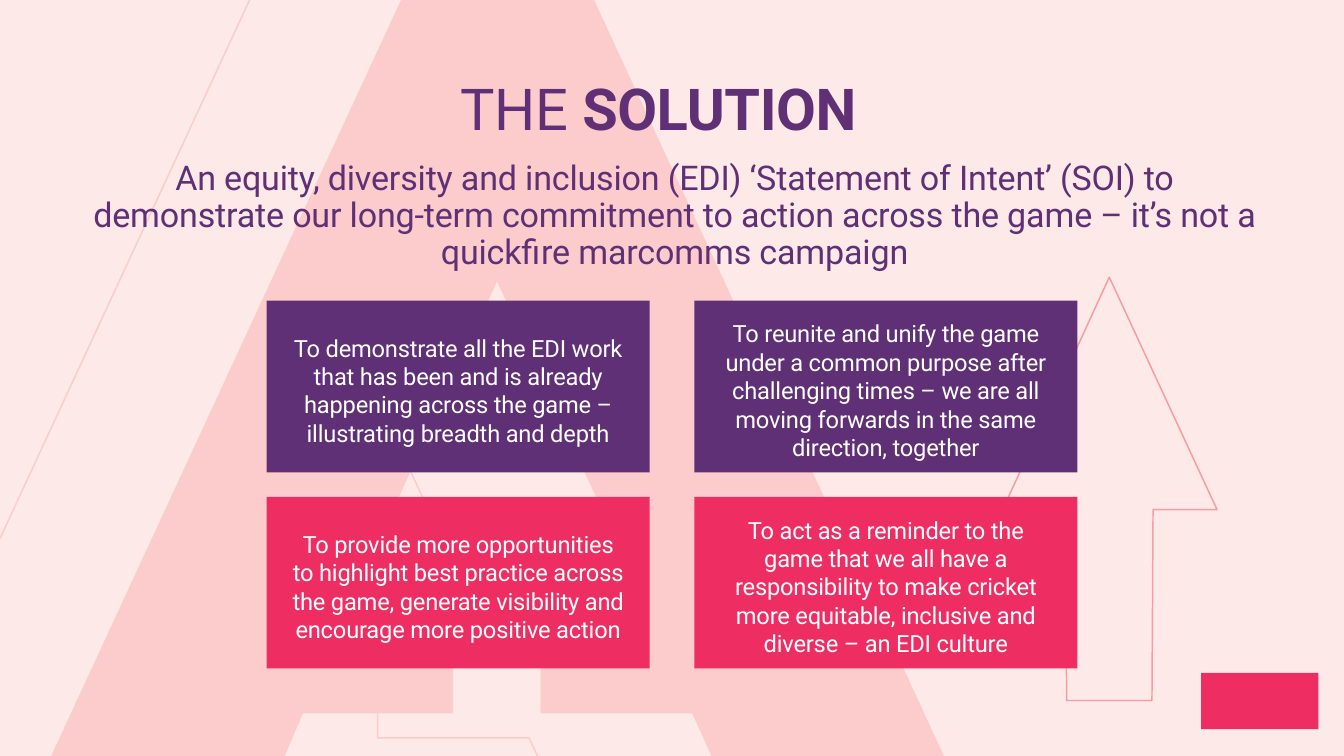
from lxml import etree
from pptx import Presentation
from pptx import util as u
from pptx.dml.color import RGBColor
from pptx.enum import shapes, text
from pptx.oxml.ns import qn

WIDTH, HEIGHT = 12.6, 7.09
FONT = "Roboto"
COLORS = {
    "background": "FDE9E7",
    "letter": "FBCCCB",
    "arrow": "F69DA2",
    "purple": "5F3075",
    "pink": "EE2E62",
    "white": "FFFFFF",
}

# Card grid: first corner, card size and distance between cards
GRID_LEFT, GRID_TOP = 2.5, 2.82
CARD_WIDTH, CARD_HEIGHT = 3.59, 1.61
COLUMN_STEP, ROW_STEP = 4.01, 1.84

# Each row: colour and (side margin, wording) for every column
CARD_ROWS = [
    ("purple", [
        (0.17, "To demonstrate all the EDI work that has been and is already "
               "happening across the game – illustrating breadth and depth"),
        (0.21, "To reunite and unify the game under a common purpose after "
               "challenging times – we are all moving forwards in the same "
               "direction, together"),
    ]),
    ("pink", [
        (0.24, "To provide more opportunities to highlight best practice across "
               "the game, generate visibility and encourage more positive action"),
        (0.3, "To act as a reminder to the game that we all have a responsibility "
              "to make cricket more equitable, inclusive and diverse – an EDI culture"),
    ]),
]

# Outlines in inches
UP_ARROW = [(9.4, 4.78), (9.99, 4.78), (10, 6.57), (10.8, 6.57),
            (10.81, 4.78), (11.41, 4.78), (10.4, 2.6)]
LETTER_A = [(3.76, 0), (0.48, HEIGHT), (2.67, HEIGHT), (2.84, 6.69), (4.25, 6.69),
            (4.25, 4.86), (3.65, 4.86), (4.66, 2.64), (5.68, 4.86), (5.07, 4.86),
            (5.07, 6.69), (6.49, 6.69), (6.67, HEIGHT), (8.85, HEIGHT), (5.57, 0)]
INNER_LINE = [(1.24, HEIGHT), (1.32, 6.92), (2.73, 6.92), (2.72, 5.09), (2.12, 5.09),
              (3.13, 2.87), (4.16, 5.09), (3.54, 5.09), (3.54, 6.92), (4.96, 6.92),
              (5.04, HEIGHT)]
SLANTED_LINES = [((0, 5.05), (2.34, 0)), ((3.93, 0), (7.22, HEIGHT))]


def rgb(name):
    return RGBColor.from_string(COLORS[name])


def paint(shape, fill=None, line=None):
    shape.shadow.inherit = False
    if fill:
        shape.fill.solid()
        shape.fill.fore_color.rgb = rgb(fill)
    else:
        shape.fill.background()
    if line:
        shape.line.color.rgb = rgb(line)
        shape.line.width = u.Pt(1)
    else:
        shape.line.fill.background()


def add_outline(slide, points, close=True, **colors):
    hundredths = [(x * 100, y * 100) for x, y in points]
    builder = slide.shapes.build_freeform(*hundredths[0], scale=u.Inches(0.01))
    builder.add_line_segments(hundredths[1:], close=close)
    paint(builder.convert_to_shape(), **colors)


def add_line(slide, start, end, color):
    ends = [u.Inches(value) for value in (*start, *end)]
    line = slide.shapes.add_connector(shapes.MSO_CONNECTOR.STRAIGHT, *ends)
    line.line.color.rgb = rgb(color)
    line.line.width = u.Pt(1)
    etree.SubElement(line._element.spPr, qn("a:effectLst"))


def write(shape, *parts, size, color, align=text.PP_ALIGN.CENTER,
          anchor=text.MSO_ANCHOR.TOP, side=0, top=0, leading=None, tracking=0):
    """Write (wording, bold) parts as one paragraph."""
    frame = shape.text_frame
    frame.word_wrap = True
    frame.vertical_anchor = anchor
    frame.margin_left = frame.margin_right = u.Inches(side)
    frame.margin_top, frame.margin_bottom = u.Inches(top), 0
    paragraph = frame.paragraphs[0]
    paragraph.alignment = align
    if leading:
        paragraph.line_spacing = u.Pt(leading)
    for wording, bold in parts:
        run = paragraph.add_run()
        run.text = wording
        run.font.name, run.font.size, run.font.bold = FONT, u.Pt(size), bold
        run.font.color.rgb = rgb(color)
        if tracking:
            run._r.get_or_add_rPr().set("spc", str(round(tracking * 100)))


def add_text(slide, box, *parts, **form):
    area = slide.shapes.add_textbox(*[u.Inches(value) for value in box])
    write(area, *parts, **form)


def add_block(slide, box, fill):
    block = slide.shapes.add_shape(shapes.MSO_SHAPE.RECTANGLE,
                                   *[u.Inches(value) for value in box])
    paint(block, fill=fill)
    return block


def add_cards(slide):
    for row, (fill, cards) in enumerate(CARD_ROWS):
        for column, (side, wording) in enumerate(cards):
            card = add_block(slide, (GRID_LEFT + column * COLUMN_STEP,
                                     GRID_TOP + row * ROW_STEP,
                                     CARD_WIDTH, CARD_HEIGHT), fill)
            write(card, (wording, False), size=16, color="white", side=side,
                  top=0.07, anchor=text.MSO_ANCHOR.MIDDLE, tracking=-0.1)


def main():
    deck = Presentation()
    deck.slide_width, deck.slide_height = u.Inches(WIDTH), u.Inches(HEIGHT)
    slide = deck.slides.add_slide(deck.slide_layouts[6])

    # Backdrop
    slide.background.fill.solid()
    slide.background.fill.fore_color.rgb = rgb("background")
    add_outline(slide, UP_ARROW, line="arrow")
    add_outline(slide, LETTER_A, fill="letter")
    add_outline(slide, INNER_LINE, close=False, line="letter")
    for start, end in SLANTED_LINES:
        add_line(slide, start, end, "letter")

    # Heading
    add_text(slide, (4.32, 0.64, 3.96, 0.68), ("THE ", False), ("SOLUTION", True),
             size=39, color="purple", align=text.PP_ALIGN.LEFT, top=0.04, tracking=-0.3)
    add_text(slide, (0.8, 1.44, 11.05, 1.11),
             ("An equity, diversity and inclusion (EDI) ‘Statement of Intent’ (SOI) to "
              "demonstrate our long-term commitment to action across the game – it’s "
              "not a quickfire marcomms campaign", False),
             size=23, color="purple", top=0.06, leading=25, tracking=-0.15)

    # Aims
    add_cards(slide)

    # Plain badge in the corner
    add_block(slide, (11.26, 6.31, 1.1, 0.53), "pink")

    deck.save("out.pptx")


if __name__ == "__main__":
    main()
